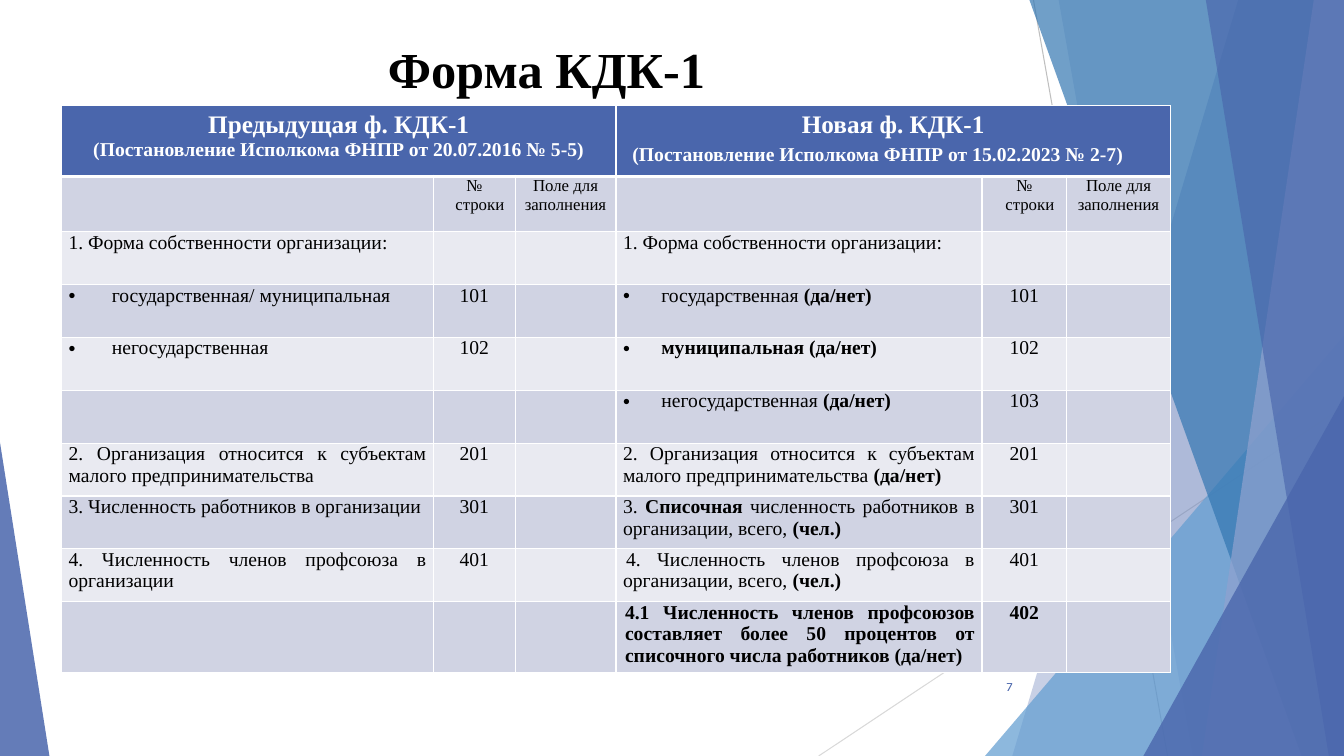
from lxml import etree
from pptx import Presentation
from pptx.dml.color import RGBColor
from pptx.enum.shapes import MSO_CONNECTOR, MSO_SHAPE
from pptx.enum.text import MSO_ANCHOR, PP_ALIGN
from pptx.oxml.ns import qn
from pptx.util import Inches, Pt

LEFT, CENTER, RIGHT, JUSTIFY = PP_ALIGN.LEFT, PP_ALIGN.CENTER, PP_ALIGN.RIGHT, PP_ALIGN.JUSTIFY
MIDDLE = MSO_ANCHOR.MIDDLE
TRIANGLE = MSO_SHAPE.ISOSCELES_TRIANGLE
STRAIGHT = MSO_CONNECTOR.STRAIGHT

WHITE = RGBColor(0xFF, 0xFF, 0xFF)
BLACK = RGBColor(0, 0, 0)
INDIGO = RGBColor(0x4A, 0x66, 0xAC)
SKY = RGBColor(0x62, 0x9D, 0xD1)
BLUE = RGBColor(0x34, 0x77, 0xB2)
LAVENDER = RGBColor(0x90, 0xA2, 0xCF)
BAND_DARK = RGBColor(0xD0, 0xD3, 0xE3)
BAND_LIGHT = RGBColor(0xE9, 0xEA, 0xF1)
GRAY = RGBColor(0xBF, 0xBF, 0xBF)
LIGHT_GRAY = RGBColor(0xD9, 0xD9, 0xD9)
SERIF, SANS = "Times New Roman", "Karla"

WIDTH, HEIGHT = 13.33, 7.5
TITLE = "Форма КДК-1"
PAGE_NUMBER = "7"

# start x, start y, end x, end y, colour
RAYS = [(10.25, 0, 11.58, HEIGHT, GRAY), (WIDTH, 4.03, 8.12, HEIGHT, LIGHT_GRAY)]
# Facets reach the right edge: top x, bottom x, colour, opacity in percent
# Triangles: left, top, width, apex position, colour, opacity in percent
FACETS = [
    ("band", 12.28, 10.04, INDIGO, 30),
    ("band", 10.5, 11.83, INDIGO, 20),
    ("triangle", 9.77, 3.33, 3.56, 1, SKY, 72),
    ("band", 10.21, 12.91, BLUE, 70),
    ("band", 13.03, 11.92, LAVENDER, 70),
    ("band", 11.96, 13.18, INDIGO, 65),
    ("triangle", 11.34, 3.93, 1.99, 1, INDIGO, 80),
    ("triangle", 0, 4.39, 0.49, 0, INDIGO, 85),
]

FORMS = [
    ("Предыдущая ф. КДК-1", "(Постановление Исполкома ФНПР от 20.07.2016 № 5-5)"),
    ("Новая ф. КДК-1", "(Постановление Исполкома ФНПР от 15.02.2023 № 2-7)"),
]
YES_NO, PEOPLE = ("(да/нет)", True), ("(чел.)", True)
# previous text, previous number, new runs (text, bold), new number, bulleted
ENTRIES = [
    ("1. Форма собственности организации:", "",
     [("1. Форма собственности организации:", False)], "", False),
    ("государственная/ муниципальная", "101",
     [("государственная ", False), YES_NO], "101", True),
    ("негосударственная", "102", [("муниципальная (да/нет)", True)], "102", True),
    ("", "", [("негосударственная ", False), YES_NO], "103", True),
    ("2. Организация относится к субъектам малого предпринимательства", "201",
     [("2. Организация относится к субъектам малого предпринимательства ", False), YES_NO],
     "201", False),
    ("3. Численность работников в организации", "301",
     [("3. ", False), ("Списочная", True),
      (" численность работников в организации, всего, ", False), PEOPLE], "301", False),
    ("4. Численность членов профсоюза в организации", "401",
     [("4. Численность членов профсоюза в организации, всего, ", False), PEOPLE],
     "401", False),
    ("", "", [("4.1 Численность членов профсоюзов составляет более 50 процентов "
               "от списочного числа работников (да/нет)", True)], "402", False),
]
COLUMNS = [3.69, 0.81, 1, 3.63, 0.84, 1.03]
ENTRY_HEIGHT = 3.67 / 7
ROWS = [0.64, 0.55] + [ENTRY_HEIGHT] * 7 + [0.64]


def write(paragraph, runs, size, align, color=BLACK, font=SERIF):
    """Fill a paragraph with (text, bold) runs of one size."""
    paragraph.alignment = align
    for text, bold in runs:
        run = paragraph.add_run()
        run.text = text
        run.font.size = Pt(size)
        run.font.bold = bold
        run.font.name = font
        run.font.color.rgb = color


def indent(paragraph, margin, first_line, bullet=False):
    properties = paragraph._p.get_or_add_pPr()
    properties.set("marL", str(Inches(margin)))
    properties.set("indent", str(Inches(first_line)))
    if bullet:
        etree.SubElement(properties, qn("a:buFont")).set("typeface", "Arial")
        etree.SubElement(properties, qn("a:buChar")).set("char", "•")


def paint(shape, color, opacity):
    shape.shadow.inherit = False
    shape.line.fill.background()
    shape.fill.solid()
    shape.fill.fore_color.rgb = color
    srgb = next(shape.element.spPr.iter(qn("a:srgbClr")))
    etree.SubElement(srgb, qn("a:alpha")).set("val", str(opacity * 1000))


def draw_band(shapes, top_x, bottom_x, color, opacity):
    corners = [(WIDTH, 0), (WIDTH, HEIGHT), (bottom_x, HEIGHT)]
    builder = shapes.build_freeform(Inches(top_x), 0)
    builder.add_line_segments([(Inches(x), Inches(y)) for x, y in corners], close=True)
    paint(builder.convert_to_shape(), color, opacity)


def draw_triangle(shapes, left, top, width, apex, color, opacity):
    shape = shapes.add_shape(TRIANGLE, Inches(left), Inches(top),
                             Inches(width), Inches(HEIGHT - top))
    shape.adjustments[0] = apex
    paint(shape, color, opacity)


def draw_background(shapes):
    for x1, y1, x2, y2, color in RAYS:
        ray = shapes.add_connector(STRAIGHT, Inches(x1), Inches(y1), Inches(x2), Inches(y2))
        ray.line.color.rgb = color
        ray.line.width = Pt(0.75)
        etree.SubElement(ray.element.spPr, qn("a:effectLst"))
    draw = {"band": draw_band, "triangle": draw_triangle}
    for kind, *values in FACETS:
        draw[kind](shapes, *values)


def add_label(shapes, box, text, size, align, color, bold, font):
    frame = shapes.add_textbox(*map(Inches, box)).text_frame
    frame.word_wrap = True
    frame.vertical_anchor = MIDDLE
    write(frame.paragraphs[0], [(text, bold)], size, align, color, font)


def style_cell(cell, row):
    properties = cell._tc.get_or_add_tcPr()
    for side in ("L", "R", "T", "B"):
        thick = (row, side) in ((0, "B"), (1, "T"))
        border = etree.SubElement(properties, qn("a:ln" + side), w=str(Pt(3 if thick else 1)))
        fill = etree.SubElement(border, qn("a:solidFill"))
        etree.SubElement(fill, qn("a:srgbClr")).set("val", str(WHITE))
    cell.fill.solid()
    cell.fill.fore_color.rgb = INDIGO if row == 0 else (BAND_LIGHT, BAND_DARK)[row % 2]
    if row:
        cell.margin_left = cell.margin_right = Inches(0.07)
        cell.margin_top = cell.margin_bottom = 0


def fill_headings(table):
    for start, (name, decree) in zip((0, 3), FORMS):
        cell = table.cell(0, start)
        cell.merge(table.cell(0, start + 2))
        write(cell.text_frame.paragraphs[0], [(name, True)], 18, CENTER, WHITE)
        second = cell.text_frame.add_paragraph()
        if start:
            write(second, [(" ", True)], 18, LEFT, WHITE)
        write(second, [(decree, True)], 14, LEFT if start else CENTER, WHITE)

        number_frame = table.cell(1, start + 1).text_frame
        write(number_frame.paragraphs[0], [("№", False)], 12, CENTER)
        line = number_frame.add_paragraph()
        write(line, [("строки", False)], 12, CENTER)
        indent(line, 0, 0.11)
        field = table.cell(1, start + 2).text_frame.paragraphs[0]
        write(field, [("Поле для заполнения", False)], 12, CENTER)


def fill_entries(table):
    for row, (old, old_number, new, new_number, bulleted) in enumerate(ENTRIES, 2):
        bold_number = new_number == "402"
        parts = [
            (0, [(old, False)], JUSTIFY), (1, [(old_number, False)], CENTER),
            (3, new, JUSTIFY), (4, [(new_number, bold_number)], CENTER),
        ]
        for column, runs, align in parts:
            if not runs[0][0]:
                continue
            paragraph = table.cell(row, column).text_frame.paragraphs[0]
            write(paragraph, runs, 14, align)
            if bulleted and align == JUSTIFY:
                hanging = 0.38 if column else 0.43
                indent(paragraph, hanging, -hanging, bullet=True)
            elif column == 3 and new_number in ("401", "402"):
                indent(paragraph, *((0.02, 0) if bold_number else (0, 0.03)))


def add_comparison(shapes):
    frame = shapes.add_table(len(ROWS), len(COLUMNS), Inches(0.61), Inches(1.05),
                             Inches(sum(COLUMNS)), Inches(sum(ROWS)))
    table = frame.table
    table.first_row = table.horz_banding = False
    for column, width in zip(table.columns, COLUMNS):
        column.width = Inches(width)
    for index, (row, height) in enumerate(zip(table.rows, ROWS)):
        row.height = Inches(height)
        for cell in row.cells:
            style_cell(cell, index)
    fill_headings(table)
    fill_entries(table)


def main():
    presentation = Presentation()
    presentation.slide_width, presentation.slide_height = Inches(WIDTH), Inches(HEIGHT)
    shapes = presentation.slides.add_slide(presentation.slide_layouts[6]).shapes
    draw_background(shapes)
    add_label(shapes, (9.39, 6.61, 0.75, 0.4), PAGE_NUMBER, 9, RIGHT, INDIGO, False, SANS)
    add_label(shapes, (0.79, 0.41, 9.26, 0.53), TITLE, 36, CENTER, BLACK, True, SERIF)
    add_comparison(shapes)
    presentation.save("out.pptx")


if __name__ == "__main__":
    main()
